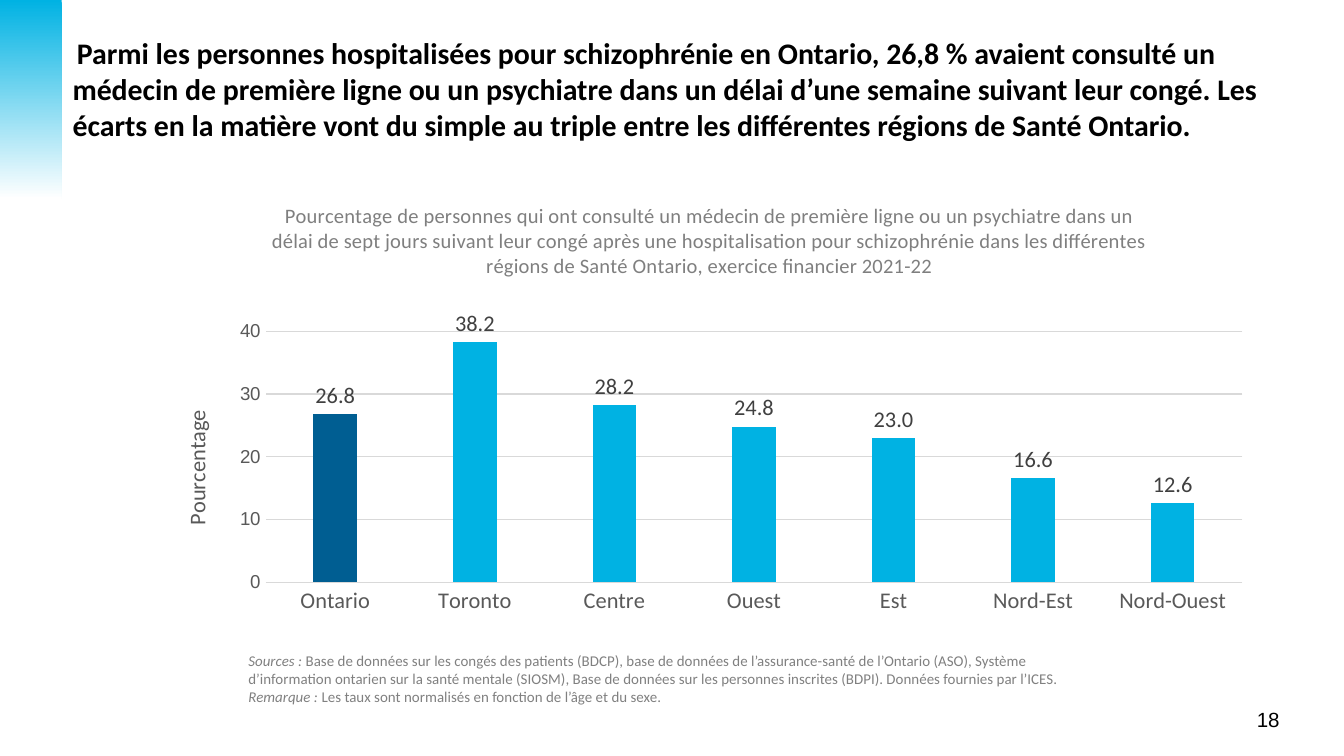
from lxml.etree import SubElement
from pptx import Presentation
from pptx.chart.data import CategoryChartData
from pptx.dml.color import RGBColor
from pptx.enum.chart import XL_CHART_TYPE, XL_LABEL_POSITION, XL_TICK_MARK
from pptx.enum.shapes import MSO_SHAPE
from pptx.enum.text import MSO_ANCHOR, MSO_AUTO_SIZE, PP_ALIGN
from pptx.oxml.ns import qn
from pptx.util import Inches, Pt

BLACK = RGBColor(0x00, 0x00, 0x00)
WHITE = RGBColor(0xFF, 0xFF, 0xFF)
CYAN = RGBColor(0x00, 0xB2, 0xE3)
NAVY = RGBColor(0x00, 0x5E, 0x92)
NOTE_GRAY = RGBColor(0x80, 0x80, 0x80)
TITLE_GRAY = RGBColor(0x7F, 0x7F, 0x7F)
AXIS_GRAY = RGBColor(0x59, 0x59, 0x59)
LABEL_GRAY = RGBColor(0x40, 0x40, 0x40)
GRID_GRAY = RGBColor(0xD9, 0xD9, 0xD9)

HEADLINE = (
    "Parmi les personnes hospitalisées pour schizophrénie en Ontario, 26,8 % avaient consulté un "
    "médecin de première ligne ou un psychiatre dans un délai d’une semaine suivant leur congé. "
    "Les écarts en la matière vont du simple au triple entre les différentes régions de Santé Ontario."
)
CHART_TITLE = (
    "Pourcentage de personnes qui ont consulté un médecin de première ligne ou un psychiatre dans un "
    "délai de sept jours suivant leur congé après une hospitalisation pour schizophrénie dans les "
    "différentes régions de Santé Ontario, exercice financier 2021-22"
)
SOURCES = (
    "Base de données sur les congés des patients (BDCP), base de données de l’assurance-santé de "
    "l’Ontario (ASO), Système d’information ontarien sur la santé mentale (SIOSM), Base de données "
    "sur les personnes inscrites (BDPI). Données fournies par l’ICES."
)
REMARK = "Les taux sont normalisés en fonction de l’âge et du sexe."
RATES = {
    "Ontario": 26.8,
    "Toronto": 38.2,
    "Centre": 28.2,
    "Ouest": 24.8,
    "Est": 23.0,
    "Nord-Est": 16.6,
    "Nord-Ouest": 12.6,
}
PLOT_LAYOUT = {"x": 0.1, "y": 0.34, "w": 0.88, "h": 0.57}


class SlideBuilder:
    """Hold the text style and the current slide, and add each kind of element."""

    body_font = "Calibri"
    number_font = "Arial"

    def __init__(self, presentation):
        self.slide = presentation.slides.add_slide(presentation.slide_layouts[5])

    def style(self, font, size, color, name=None, bold=False, italic=False):
        font.name = name or self.body_font
        font.size = Pt(size)
        font.color.rgb = color
        font.bold = bold
        font.italic = italic

    def run(self, paragraph, text, size, color, **options):
        run = paragraph.add_run()
        run.text = text
        self.style(run.font, size, color, **options)

    def place(self, shape, left, top, width, height):
        shape.left, shape.top = Inches(left), Inches(top)
        shape.width, shape.height = Inches(width), Inches(height)

    def title(self, text, *box):
        shape = self.slide.shapes.title
        self.place(shape, *box)
        frame = shape.text_frame
        frame.word_wrap = True
        frame.auto_size = MSO_AUTO_SIZE.NONE
        frame.vertical_anchor = MSO_ANCHOR.TOP
        paragraph = frame.paragraphs[0]
        paragraph.alignment = PP_ALIGN.LEFT
        self.run(paragraph, " ", 10.5, BLACK)
        self.run(paragraph, text, 16, BLACK, bold=True)

    def gradient_band(self, *box):
        shape = self.slide.shapes.add_shape(MSO_SHAPE.RECTANGLE, *map(Inches, box))
        shape.shadow.inherit = False
        shape.element.remove(shape.element.find(qn("p:style")))
        shape.line.fill.background()
        shape.fill.gradient()
        shape.fill.gradient_angle = 270
        for stop, position, color in zip(shape.fill.gradient_stops, (0, 1), (CYAN, WHITE)):
            stop.position = position
            stop.color.rgb = color

    def text_frame(self, *box):
        frame = self.slide.shapes.add_textbox(*map(Inches, box)).text_frame
        frame.word_wrap = True
        return frame

    def notes(self, entries, *box):
        frame = self.text_frame(*box)
        for index, (heading, text) in enumerate(entries):
            paragraph = frame.add_paragraph() if index else frame.paragraphs[0]
            self.run(paragraph, heading, 8, NOTE_GRAY, italic=True)
            self.run(paragraph, text, 8, NOTE_GRAY)

    def page_number(self, number, *box):
        paragraph = self.text_frame(*box).paragraphs[0]
        paragraph.alignment = PP_ALIGN.RIGHT
        self.run(paragraph, number, 11, BLACK, name=self.number_font)

    def column_chart(self, rates, title, axis_title, *box):
        data = CategoryChartData(number_format="#,##0.0")
        data.categories = list(rates)
        data.add_series("Series 1", list(rates.values()))
        frame = self.slide.shapes.add_chart(XL_CHART_TYPE.COLUMN_CLUSTERED, *map(Inches, box), data)
        chart = frame.chart
        chart.has_legend = False
        self.style(chart.font, 10, BLACK, name=self.number_font)
        self.run(chart.chart_title.text_frame.paragraphs[0], title, 11, TITLE_GRAY)
        chart.chart_title.include_in_layout = False
        self.category_axis(chart.category_axis)
        self.value_axis(chart.value_axis, axis_title)
        self.columns(chart.plots[0])
        self.plot_layout(chart)

    def category_axis(self, axis):
        axis.major_tick_mark = axis.minor_tick_mark = XL_TICK_MARK.NONE
        self.style(axis.tick_labels.font, 12, AXIS_GRAY)
        self.gray_line(axis.format.line)

    def value_axis(self, axis, title):
        axis.minimum_scale, axis.maximum_scale, axis.major_unit = 0, 40, 10
        axis.major_tick_mark = axis.minor_tick_mark = XL_TICK_MARK.NONE
        axis.tick_labels.number_format = "#,##0"
        axis.tick_labels.number_format_is_linked = False
        self.style(axis.tick_labels.font, 10, AXIS_GRAY, name=self.number_font)
        axis.format.line.fill.background()
        self.gray_line(axis.major_gridlines.format.line)
        self.run(axis.axis_title.text_frame.paragraphs[0], title, 12, AXIS_GRAY)

    def gray_line(self, line):
        line.color.rgb = GRID_GRAY
        line.width = Pt(0.75)

    def columns(self, plot):
        plot.gap_width, plot.overlap = 219, -27
        plot.vary_by_categories = False
        series = plot.series[0]
        for part, color in ((series, CYAN), (series.points[0], NAVY)):
            part.format.fill.solid()
            part.format.fill.fore_color.rgb = color
        labels = series.data_labels
        labels.show_value = True
        labels.number_format = "#,##0.0"
        labels.number_format_is_linked = False
        labels.position = XL_LABEL_POSITION.OUTSIDE_END
        self.style(labels.font, 12, LABEL_GRAY)

    def plot_layout(self, chart):
        plot_area = chart.element.find(".//" + qn("c:plotArea"))
        layout = plot_area.find(qn("c:layout"))
        if layout is None:
            layout = SubElement(plot_area, qn("c:layout"))
            plot_area.insert(0, layout)
        manual = SubElement(layout, qn("c:manualLayout"))
        settings = {"layoutTarget": "inner", "xMode": "edge", "yMode": "edge", **PLOT_LAYOUT}
        for name, value in settings.items():
            SubElement(manual, qn("c:" + name)).set("val", str(value))


def main():
    presentation = Presentation()
    presentation.slide_width = Inches(10)
    presentation.slide_height = Inches(10 * 9 / 16)
    builder = SlideBuilder(presentation)
    builder.page_number("18", 8.45, 5.21, 1.17, 0.29)
    builder.gradient_band(0, 0, 0.46, 1.48)
    builder.notes([("Sources : ", SOURCES), ("Remarque : ", REMARK)], 1.75, 4.8, 6.5, 0.5)
    builder.column_chart(RATES, CHART_TITLE, "Pourcentage", 1.15, 1.35, 8.26, 3.28)
    builder.title(HEADLINE, 0.44, 0.21, 9.44, 0.99)
    presentation.save("out.pptx")


if __name__ == "__main__":
    main()
